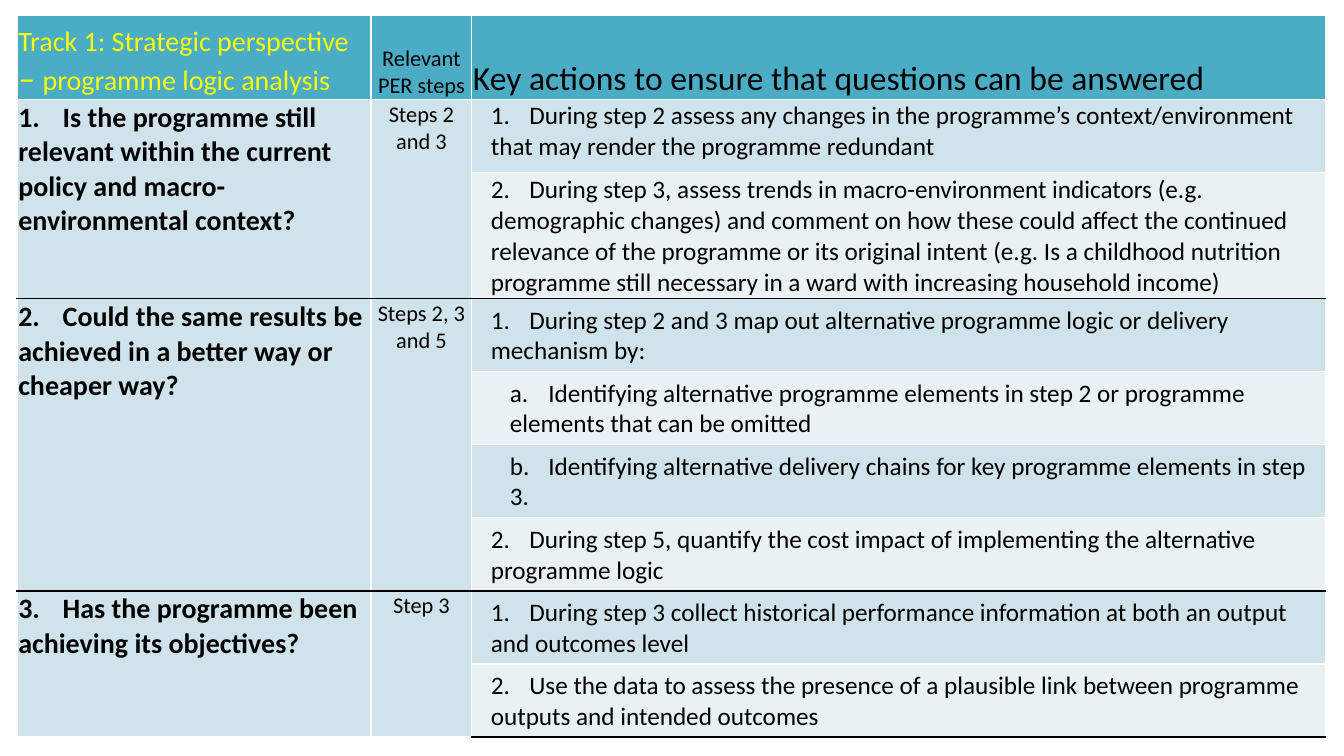
"""Build the programme logic analysis table slide."""
from dataclasses import dataclass

import lxml.etree
import pptx
import pptx.dml.color
import pptx.enum.text
import pptx.oxml.ns
import pptx.util

Cm, Pt = pptx.util.Cm, pptx.util.Pt
ANCHOR, ALIGN = pptx.enum.text.MSO_ANCHOR, pptx.enum.text.PP_ALIGN

TRACK = [("Track 1: Strategic perspective ", 20), ("– ", 24), ("programme logic analysis", 20)]
STEPS_HEADING = "Relevant PER steps"
ACTIONS_HEADING = "Key actions to ensure that questions can be answered"

SECTIONS = [
    ("1.\tIs the programme still relevant within the current policy and "
     "macro-environmental context?", "Steps 2 and 3", [
         (1, "1.\tDuring step 2 assess any changes in the programme’s context/environment "
             "that may render the programme redundant"),
         (1, "2.\tDuring step 3, assess trends in macro-environment indicators (e.g. demographic "
             "changes) and comment on how these could affect the continued relevance of the "
             "programme or its original intent (e.g. Is a childhood nutrition programme still "
             "necessary in a ward with increasing household income)"),
     ]),
    ("2.\tCould the same results be achieved in a better way or cheaper way?",
     "Steps 2, 3 and 5", [
         (1, "1.\tDuring step 2 and 3 map out alternative programme logic or delivery mechanism by:"),
         (2, "a.\tIdentifying alternative programme elements in step 2 or programme elements "
             "that can be omitted"),
         (2, "b.\tIdentifying alternative delivery chains for key programme elements in step 3."),
         (1, "2.\tDuring step 5, quantify the cost impact of implementing the alternative "
             "programme logic"),
     ]),
    ("3.\tHas the programme been achieving its objectives?", "Step 3", [
        (1, "1.\tDuring step 3 collect historical performance information at both an output "
            "and outcomes level"),
        (1, "2.\tUse the data to assess the presence of a plausible link between programme "
            "outputs and intended outcomes"),
    ]),
]

COLUMN_WIDTHS = [8.92, 2.54, 21.51]
HEADER_HEIGHT, ROW_HEIGHT, TALL_HEIGHT, TALL_ROW = 2.13, 1.84, 3.18, 2
LEFT, TOP = 0.43, 0.38
MARGIN, LEVEL_INDENT = 0.03, 0.48
QUESTION_TAB, ACTION_TAB = 1.12, 0.97


@dataclass(frozen=True)
class Theme:
    """Colours and type sizes of the slide."""
    font: str = "Calibri"
    header: str = "4BACC6"
    band_dark: str = "D0E3EA"
    band_light: str = "E9F1F5"
    track: str = "FFFF00"
    text: str = "000000"
    grid: str = "FFFFFF"
    rule: str = "000000"
    heading: int = 24
    question: int = 20
    action: int = 18
    steps: int = 16


THEME = Theme()


def rgb(value):
    """Return a colour from its hex value."""
    return pptx.dml.color.RGBColor.from_string(value)


def add_sub(parent, tag, **attributes):
    """Append a DrawingML element."""
    return lxml.etree.SubElement(parent, pptx.oxml.ns.qn(tag), **attributes)


def style_cell(cell, fill, top, bottom):
    """Give a cell its borders and fill."""
    tc_pr = cell._tc.get_or_add_tcPr()
    for side, color in (("L", THEME.grid), ("R", THEME.grid), ("T", top), ("B", bottom)):
        line = add_sub(tc_pr, f"a:ln{side}", w=str(Pt(1)))
        add_sub(add_sub(line, "a:solidFill"), "a:srgbClr", val=color)
    cell.fill.solid()
    cell.fill.fore_color.rgb = rgb(fill)


def write(cell, runs, size, color=THEME.text, bold=False, align=ALIGN.LEFT,
          anchor=ANCHOR.TOP, indent=MARGIN, tab=None):
    """Fill a cell with one paragraph of text runs."""
    cell.margin_left = Cm(indent)
    cell.margin_top = cell.margin_right = Cm(MARGIN)
    cell.margin_bottom = 0
    cell.vertical_anchor = anchor
    p = cell.text_frame.paragraphs[0]
    p.alignment = align
    if tab:
        tabs = add_sub(p._p.get_or_add_pPr(), "a:tabLst")
        add_sub(tabs, "a:tab", pos=str(Cm(tab)), algn="l")
    p.font.name, p.font.size, p.font.bold = THEME.font, Pt(size), bold
    p.font.color.rgb = rgb(color)
    for text, run_size in runs:
        r = p.add_run()
        r.text = text
        if run_size != size:
            r.font.size = Pt(run_size)


def write_plain(cell, text, size, **options):
    """Fill a cell with text of a single size."""
    write(cell, [(text, size)], size, **options)


def add_header(table):
    """Write the heading row."""
    for cell in table.rows[0].cells:
        style_cell(cell, THEME.header, THEME.grid, THEME.grid)
    track, steps, actions = table.rows[0].cells
    write(track, TRACK, THEME.question, color=THEME.track, anchor=ANCHOR.BOTTOM)
    write_plain(steps, STEPS_HEADING, THEME.steps, align=ALIGN.CENTER, anchor=ANCHOR.BOTTOM)
    write_plain(actions, ACTIONS_HEADING, THEME.heading, anchor=ANCHOR.BOTTOM)


def add_section(table, first, question, steps, actions):
    """Write one question with its steps and actions, and return the next row."""
    last = first + len(actions) - 1
    for i, (level, action) in enumerate(actions):
        row = first + i
        top = THEME.rule if i == 0 and first > 1 else THEME.grid
        bottom = THEME.rule if row == last else THEME.grid
        band = THEME.band_light if i % 2 else THEME.band_dark
        for col, fill in enumerate((THEME.band_dark, THEME.band_dark, band)):
            style_cell(table.cell(row, col), fill, top, bottom)
        write_plain(table.cell(row, 2), action, THEME.action, indent=level * LEVEL_INDENT,
                    anchor=ANCHOR.TOP if row == 1 else ANCHOR.MIDDLE, tab=ACTION_TAB)
    for col in (0, 1):
        table.cell(first, col).merge(table.cell(last, col))
    write_plain(table.cell(first, 0), question, THEME.question, bold=True, tab=QUESTION_TAB)
    write_plain(table.cell(first, 1), steps, THEME.steps, align=ALIGN.CENTER)
    return last + 1


def main():
    """Create and save the presentation."""
    prs = pptx.Presentation()
    prs.slide_width, prs.slide_height = Cm(33.87), Cm(19.05)
    s = prs.slides.add_slide(prs.slide_layouts[6])
    action_count = sum(len(actions) for _, _, actions in SECTIONS)
    heights = [HEADER_HEIGHT] + [ROW_HEIGHT] * action_count
    heights[TALL_ROW] = TALL_HEIGHT
    table = s.shapes.add_table(len(heights), len(COLUMN_WIDTHS), Cm(LEFT), Cm(TOP),
                               Cm(sum(COLUMN_WIDTHS)), Cm(sum(heights))).table
    table.first_row = table.horz_banding = False
    for column, width in zip(table.columns, COLUMN_WIDTHS):
        column.width = Cm(width)
    for row, height in zip(table.rows, heights):
        row.height = Cm(height)
    add_header(table)
    first = 1
    for section in SECTIONS:
        first = add_section(table, first, *section)
    prs.save("out.pptx")


if __name__ == "__main__":
    main()
